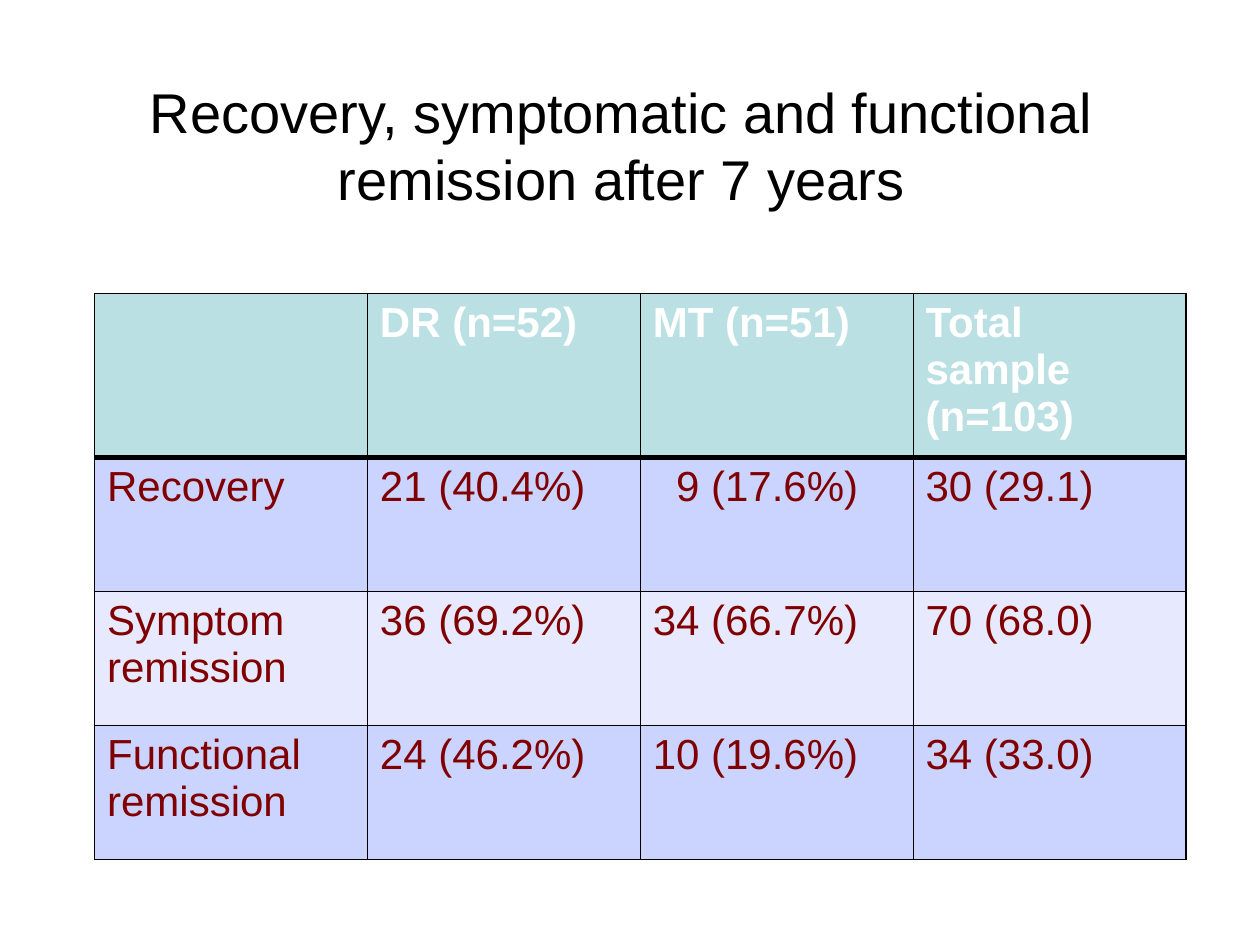
import dataclasses

import pptx
import pptx.dml.color
import pptx.enum.text
import pptx.oxml
import pptx.oxml.ns
import pptx.util

Cm = pptx.util.Cm
Pt = pptx.util.Pt
RGBColor = pptx.dml.color.RGBColor

BLACK = RGBColor(0x00, 0x00, 0x00)
WHITE = RGBColor(0xFF, 0xFF, 0xFF)
MAROON = RGBColor(0x80, 0x00, 0x00)
TEAL = RGBColor(0xBB, 0xE0, 0xE3)
BLUE = RGBColor(0xCB, 0xD3, 0xFF)
PALE_BLUE = RGBColor(0xE7, 0xEA, 0xFF)

FONT = "Arial"
COLUMN_WIDTH = Cm(5.5)
CELL_MARGIN = Cm(0.25)
DIGIT_INDENT = Cm(0.47)  # aligns a one-digit count with two-digit counts
THIN, THICK = 1, 3


@dataclasses.dataclass(frozen=True)
class TableRow:
    texts: tuple[str, ...]
    fill: RGBColor
    height: int = Cm(2.7)
    color: RGBColor = MAROON
    bold: bool = False
    top: int = THIN
    bottom: int = THIN


ROWS = (
    TableRow(("", "DR (n=52)", "MT (n=51)", "Total sample (n=103)"), TEAL,
             height=Cm(3.3), color=WHITE, bold=True, bottom=THICK),
    TableRow(("Recovery", "21 (40.4%)", "9 (17.6%)", "30 (29.1)"), BLUE, top=THICK),
    TableRow(("Symptom remission", "36 (69.2%)", "34 (66.7%)", "70 (68.0)"), PALE_BLUE),
    TableRow(("Functional remission", "24 (46.2%)", "10 (19.6%)", "34 (33.0)"), BLUE),
)


def write_text(text_frame, text: str, *, size: int, color: RGBColor,
               bold: bool = False, alignment=pptx.enum.text.PP_ALIGN.LEFT) -> None:
    text_frame.word_wrap = True
    paragraph = text_frame.paragraphs[0]
    paragraph.alignment = alignment
    run = paragraph.add_run()
    run.text = text
    run.font.name = FONT
    run.font.size = Pt(size)
    run.font.bold = bold
    run.font.color.rgb = color


def set_borders(cell, *, top: int, bottom: int) -> None:
    properties = cell._tc.get_or_add_tcPr()
    borders = {"lnL": THIN, "lnR": THIN, "lnT": top, "lnB": bottom}
    # Border lines come before the fill in the cell properties
    for position, (side, width) in enumerate(borders.items()):
        line = pptx.oxml.parse_xml(
            f'<a:{side} {pptx.oxml.ns.nsdecls("a")} w="{Pt(width)}">'
            f'<a:solidFill><a:srgbClr val="{BLACK}"/></a:solidFill></a:{side}>')
        properties.insert(position, line)


def draw_row(table, index: int, row: TableRow) -> None:
    table.rows[index].height = row.height
    for cell, text in zip(table.rows[index].cells, row.texts):
        cell.fill.solid()
        cell.fill.fore_color.rgb = row.fill
        set_borders(cell, top=row.top, bottom=row.bottom)
        one_digit = text.split(" ")[0] in set("0123456789")
        cell.margin_left = CELL_MARGIN + (DIGIT_INDENT if one_digit else 0)
        if text:
            write_text(cell.text_frame, text, size=24, color=row.color, bold=row.bold)


def main() -> None:
    presentation = pptx.Presentation()
    presentation.slide_width = Cm(25.4)
    presentation.slide_height = Cm(19.05)
    slide = presentation.slides.add_slide(presentation.slide_layouts[6])

    # Title
    title = slide.shapes.add_textbox(Cm(1.14), Cm(1.32), Cm(22.78), Cm(3.18))
    title.text_frame.vertical_anchor = pptx.enum.text.MSO_ANCHOR.MIDDLE
    write_text(title.text_frame,
               "Recovery, symptomatic and functional remission after 7 years",
               size=32, color=BLACK, alignment=pptx.enum.text.PP_ALIGN.CENTER)

    # Results table
    column_count = len(ROWS[0].texts)
    table = slide.shapes.add_table(
        len(ROWS), column_count, Cm(1.91), Cm(5.92),
        COLUMN_WIDTH * column_count, sum(row.height for row in ROWS)).table
    for column in table.columns:
        column.width = COLUMN_WIDTH
    for index, row in enumerate(ROWS):
        draw_row(table, index, row)

    presentation.save("out.pptx")


if __name__ == "__main__":
    main()
